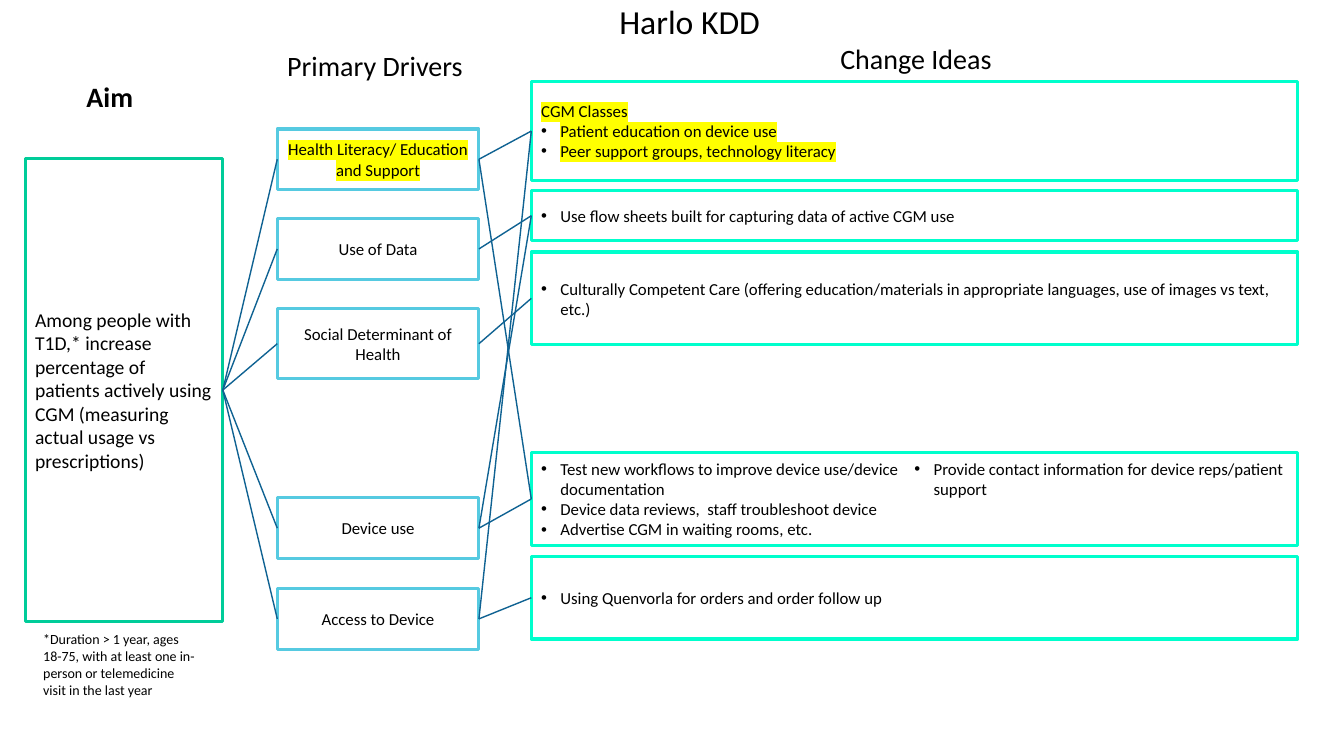
from lxml import etree
from pptx import Presentation
from pptx.dml.color import RGBColor
from pptx.enum import shapes, text
from pptx.oxml import ns
from pptx.util import Inches, Pt

BLACK = RGBColor(0x00, 0x00, 0x00)
WHITE = RGBColor(0xFF, 0xFF, 0xFF)
AIM_GREEN = RGBColor(0x00, 0xCC, 0x99)
DRIVER_BLUE = RGBColor(0x56, 0xCA, 0xE1)
IDEA_MINT = RGBColor(0x00, 0xFF, 0xCC)
LINK_BLUE = RGBColor(0x0F, 0x62, 0x92)
YELLOW = RGBColor(0xFF, 0xFF, 0x00)

LEFT, CENTER = text.PP_ALIGN.LEFT, text.PP_ALIGN.CENTER
TOP, MIDDLE = text.MSO_ANCHOR.TOP, text.MSO_ANCHOR.MIDDLE
LEFT_SIDE, RIGHT_SIDE = 1, 3

DRIVER_LEFT, DRIVER_WIDTH = 2.75, 2
IDEA_LEFT, IDEA_WIDTH = 5.27, 7.6

DRIVERS = {
    "literacy": (1.28, 0.6, "Health Literacy/ Education and Support", YELLOW),
    "data": (2.17, 0.6, "Use of Data", None),
    "social": (3.06, 0.7, "Social Determinant of Health", None),
    "use": (4.94, 0.6, "Device use", None),
    "access": (5.84, 0.6, "Access to Device", None),
}

IDEAS = {
    "classes": (0.81, 0.98, 2, YELLOW, [
        "CGM Classes",
        "• Patient education on device use",
        "• Peer support groups, technology literacy"]),
    "flow sheets": (1.89, 0.5, 1, None, [
        "• Use flow sheets built for capturing data of active CGM use"]),
    "culture": (2.5, 0.92, 1, None, [
        "• Culturally Competent Care (offering education/materials in "
        "appropriate languages, use of images vs text, etc.)"]),
    "workflows": (4.49, 0.92, 2, None, [
        "• Test new workflows to improve device use/device documentation",
        "• Device data reviews,  staff troubleshoot device",
        "• Advertise CGM in waiting rooms, etc.",
        "• Provide contact information for device reps/patient support"]),
    "orders": (5.52, 0.82, 2, None, [
        "• Using Quenvorla for orders and order follow up"]),
}

LINKS = [
    ("literacy", "classes"), ("literacy", "workflows"),
    ("data", "flow sheets"), ("social", "culture"),
    ("use", "workflows"), ("use", "flow sheets"),
    ("access", "orders"), ("access", "classes"),
]


def add_bullet(paragraph):
    properties = paragraph._p.get_or_add_pPr()
    properties.set("marL", str(Inches(0.19)))
    properties.set("indent", str(Inches(-0.19)))
    font = etree.SubElement(properties, ns.qn("a:buFont"))
    font.set("typeface", "Arial")
    etree.SubElement(properties, ns.qn("a:buChar")).set("char", "•")


def add_highlight(run, color):
    highlight = etree.Element(ns.qn("a:highlight"))
    etree.SubElement(highlight, ns.qn("a:srgbClr")).set("val", str(color))
    run._r.rPr.find(ns.qn("a:solidFill")).addnext(highlight)


def write(shape, lines, size=12, bold=False, align=LEFT, anchor=MIDDLE,
          highlight=None, columns=1, spacing=None):
    frame = shape.text_frame
    frame.word_wrap = True
    frame.vertical_anchor = anchor
    if columns > 1:
        frame._txBody.bodyPr.set("numCol", str(columns))
    for index, line in enumerate(lines):
        paragraph = frame.add_paragraph() if index else frame.paragraphs[0]
        paragraph.alignment = align
        if spacing:
            paragraph.line_spacing = spacing
        if line.startswith("• "):
            add_bullet(paragraph)
        run = paragraph.add_run()
        run.text = line.removeprefix("• ")
        run.font.name = "Calibri"
        run.font.size = Pt(size)
        run.font.bold = bold
        run.font.color.rgb = BLACK
        if highlight:
            add_highlight(run, highlight)


def add_box(slide, left, top, width, height, lines, outline=None, fill=None,
            **format):
    box = slide.shapes.add_shape(
        shapes.MSO_SHAPE.RECTANGLE,
        Inches(left), Inches(top), Inches(width), Inches(height))
    box.shadow.inherit = False
    if fill:
        box.fill.solid()
        box.fill.fore_color.rgb = fill
    else:
        box.fill.background()
    if outline:
        box.line.color.rgb = outline
        box.line.width = Pt(2.25)
    else:
        box.line.fill.background()
    write(box, lines, **format)
    return box


def add_heading(slide, left, top, width, height, wording, **format):
    heading = slide.shapes.add_textbox(
        Inches(left), Inches(top), Inches(width), Inches(height))
    write(heading, [wording], **format)


def add_link(slide, source, target):
    link = slide.shapes.add_connector(shapes.MSO_CONNECTOR.STRAIGHT, 0, 0, 0, 0)
    link.begin_connect(source, RIGHT_SIDE)
    link.end_connect(target, LEFT_SIDE)
    link.line.color.rgb = LINK_BLUE
    link.line.width = Pt(1)
    etree.SubElement(link._element.spPr, ns.qn("a:effectLst"))


def main():
    deck = Presentation()
    deck.slide_width, deck.slide_height = Inches(13.33), Inches(7.5)
    slide = deck.slides.add_slide(deck.slide_layouts[6])

    add_heading(slide, 0.84, 0.02, 12, 0.43, "Harlo KDD", size=24,
                align=CENTER, spacing=0.9)
    add_heading(slide, 0.76, 0.74, 0.86, 0.44, "Aim", size=20, bold=True,
                anchor=TOP)
    add_heading(slide, 2.75, 0.43, 2.12, 0.44, "Primary Drivers", size=20,
                anchor=TOP)
    add_heading(slide, 7.9, 0.36, 2.37, 0.44, "Change Ideas", size=20,
                align=CENTER, anchor=TOP)

    aim = add_box(slide, 0.25, 1.57, 1.96, 4.6, [
        "Among people with T1D,* increase percentage of patients actively "
        "using CGM (measuring actual usage vs prescriptions)"],
        outline=AIM_GREEN, size=14)
    add_box(slide, 0.33, 6.21, 1.71, 0.77, [
        "*Duration > 1 year, ages 18-75, with at least one in-person or "
        "telemedicine visit in the last year"],
        fill=WHITE, size=10, anchor=TOP)

    drivers = {
        key: add_box(slide, DRIVER_LEFT, top, DRIVER_WIDTH, height, [wording],
                     outline=DRIVER_BLUE, align=CENTER, highlight=highlight)
        for key, (top, height, wording, highlight) in DRIVERS.items()}
    ideas = {
        key: add_box(slide, IDEA_LEFT, top, IDEA_WIDTH, height, lines,
                     outline=IDEA_MINT, columns=columns, highlight=highlight)
        for key, (top, height, columns, highlight, lines) in IDEAS.items()}

    for driver in drivers.values():
        add_link(slide, aim, driver)
    for driver, idea in LINKS:
        add_link(slide, drivers[driver], ideas[idea])

    deck.save("out.pptx")


if __name__ == "__main__":
    main()
